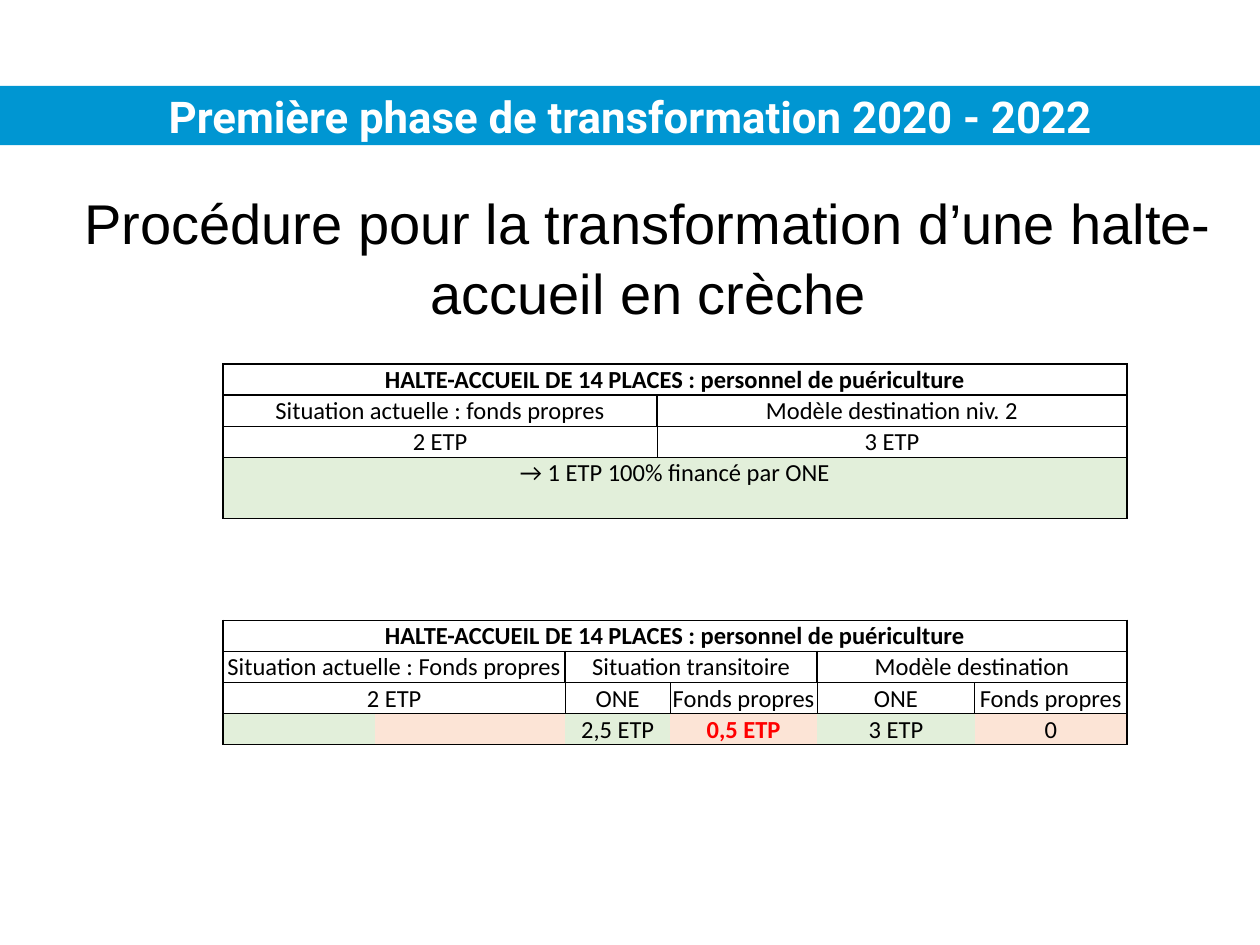
from dataclasses import dataclass

from lxml.etree import SubElement
from pptx import Presentation
from pptx.dml.color import RGBColor
from pptx.enum.shapes import MSO_SHAPE
from pptx.enum.text import MSO_ANCHOR, PP_ALIGN
from pptx.oxml.ns import qn
from pptx.util import Pt


@dataclass(frozen=True)
class Theme:
    banner: str = "0096D2"
    white: str = "FFFFFF"
    black: str = "000000"
    red: str = "FF0000"
    green: str = "E2EFDA"
    orange: str = "FCE4D6"
    banner_size: float = 25
    heading_size: float = 32
    table_size: float = 14


@dataclass(frozen=True)
class Entry:
    text: str = ""
    span: int = 1
    fill: str = ""
    color: str = Theme.black
    bold: bool = False
    anchor: MSO_ANCHOR = MSO_ANCHOR.MIDDLE


@dataclass(frozen=True)
class Row:
    entries: list
    top: float = 0
    bottom: float = 0
    inner: float = 0
    outer: float = 1
    height: float = 17.75


THEME = Theme()
TABLE_LEFT = 127.5


def write_text(text_frame, text, font_name, size, color, bold=False):
    text_frame.text = text
    paragraph = text_frame.paragraphs[0]
    paragraph.alignment = PP_ALIGN.CENTER
    for run in paragraph.runs:
        run.font.name = font_name
        run.font.size = Pt(size)
        run.font.bold = bold
        run.font.color.rgb = RGBColor.from_string(color)
    return paragraph


def add_banner(slide, text):
    shape = slide.shapes.add_shape(MSO_SHAPE.RECTANGLE, 0, Pt(49), Pt(720), Pt(34))
    shape.shadow.inherit = False
    shape.fill.solid()
    shape.fill.fore_color.rgb = RGBColor.from_string(THEME.banner)
    shape.line.fill.background()
    shape.text_frame.vertical_anchor = MSO_ANCHOR.MIDDLE
    write_text(shape.text_frame, text, "Roboto", THEME.banner_size, THEME.white, True)


def add_heading(slide, text):
    shape = slide.shapes.add_textbox(Pt(36), Pt(102.5), Pt(669), Pt(381))
    shape.text_frame.word_wrap = True
    paragraph = write_text(
        shape.text_frame, text, "Arial", THEME.heading_size, THEME.black
    )
    paragraph.line_spacing = 1.04


def set_borders(cell, left, right, top, bottom):
    properties = cell._tc.get_or_add_tcPr()
    for side, width in zip("LRTB", (left, right, top, bottom)):
        line = SubElement(properties, qn(f"a:ln{side}"), w=str(Pt(width)))
        if width:
            fill = SubElement(line, qn("a:solidFill"))
            SubElement(fill, qn("a:srgbClr"), val=THEME.black)
        else:
            SubElement(line, qn("a:noFill"))


def fill_cell(cell, entry):
    cell.margin_left = cell.margin_right = cell.margin_top = Pt(0.7)
    cell.margin_bottom = 0
    cell.vertical_anchor = entry.anchor
    if entry.fill:
        cell.fill.solid()
        cell.fill.fore_color.rgb = RGBColor.from_string(entry.fill)
    else:
        cell.fill.background()
    paragraph = write_text(
        cell.text_frame, entry.text, "Calibri", THEME.table_size, entry.color, entry.bold
    )
    if not entry.text:
        paragraph.font.size = Pt(THEME.table_size)


def add_staff_table(slide, top, widths, rows):
    frame = slide.shapes.add_table(
        len(rows), len(widths), Pt(TABLE_LEFT), Pt(top),
        Pt(sum(widths)), Pt(sum(row.height for row in rows)),
    )
    table = frame.table
    table.first_row = False
    table.horz_banding = False
    for column, width in zip(table.columns, widths):
        column.width = Pt(width)
    for row_index, row in enumerate(rows):
        table.rows[row_index].height = Pt(row.height)
        start = 0
        for entry in row.entries:
            end = start + entry.span
            left = row.inner if start else row.outer
            right = row.inner if end < len(widths) else row.outer
            cells = [table.cell(row_index, index) for index in range(start, end)]
            for cell in cells:
                set_borders(cell, left, right, row.top, row.bottom)
            if entry.span > 1:
                cells[0].merge(cells[-1])
            fill_cell(cells[0], entry)
            start = end


def title_row(column_count):
    title = "HALTE-ACCUEIL DE 14 PLACES : personnel de puériculture"
    return Row([Entry(title, column_count, bold=True)], top=1, bottom=1)


def header_row(*labels):
    entries = [Entry(label, 2, anchor=MSO_ANCHOR.BOTTOM) for label in labels]
    return Row(entries, top=1, bottom=0.5, inner=1)


def middle_row(*entries):
    return Row(entries, top=0.5, bottom=0.5, inner=0.5)


def result_row(*entries, height=17.75):
    return Row(entries, top=0.5, bottom=1, height=height)


def empty_row(*spans, top=0):
    return Row([Entry(span=span) for span in spans], top=top, outer=0)


def main():
    presentation = Presentation()
    presentation.slide_width = Pt(720)
    presentation.slide_height = Pt(540)
    slide = presentation.slides.add_slide(presentation.slide_layouts[6])

    add_banner(slide, "Première phase de transformation 2020 - 2022")
    add_heading(slide, "Procédure pour la transformation d’une halte-accueil en crèche")

    financed = Entry(
        "→ 1 ETP 100% financé par ONE", 4, THEME.green, anchor=MSO_ANCHOR.TOP
    )
    add_staff_table(slide, 208, [126.5, 121.5, 81.5, 187], [
        title_row(4),
        header_row("Situation actuelle : fonds propres", "Modèle destination niv. 2"),
        middle_row(Entry("2 ETP", 2), Entry("3 ETP", 2)),
        result_row(financed, height=35),
        empty_row(1, 1, 1, 1, top=1),
        empty_row(3, 1),
        empty_row(3, 1),
    ])

    sources = [Entry("ONE"), Entry("Fonds propres")]
    add_staff_table(slide, 354.5, [87, 108.5, 60, 84, 90, 87], [
        title_row(6),
        header_row(
            "Situation actuelle : Fonds propres",
            "Situation transitoire",
            "Modèle destination",
        ),
        middle_row(Entry("2 ETP", 2), *sources, *sources),
        result_row(
            Entry(fill=THEME.green),
            Entry(fill=THEME.orange),
            Entry("2,5 ETP", fill=THEME.green),
            Entry("0,5 ETP", fill=THEME.orange, color=THEME.red, bold=True),
            Entry("3 ETP", fill=THEME.green),
            Entry("0", fill=THEME.orange),
        ),
        empty_row(1, 1, 1, 1, 1, 1, top=1),
        empty_row(1, 1, 3, 1),
        empty_row(1, 1, 3, 1),
    ])

    presentation.save("out.pptx")


if __name__ == "__main__":
    main()
